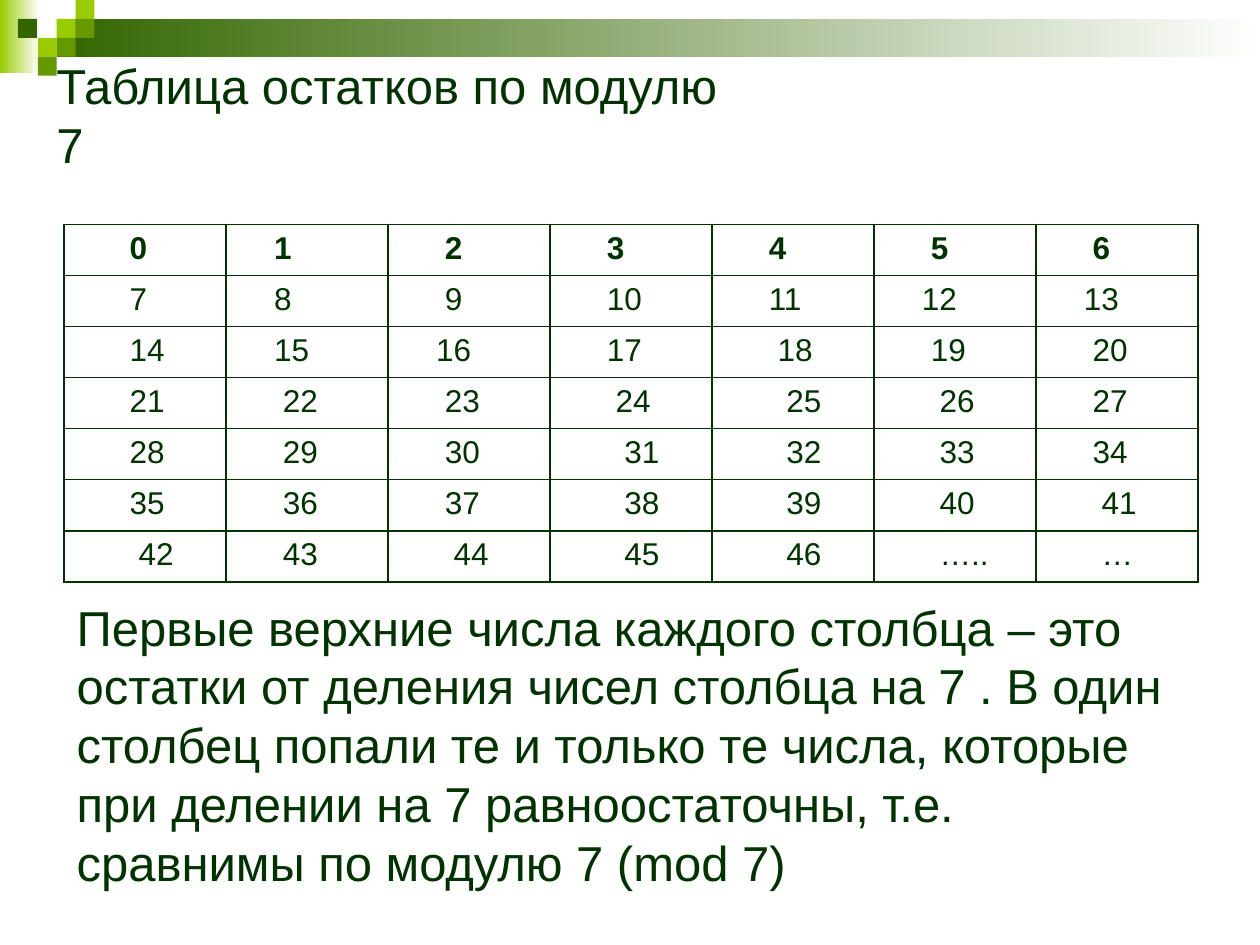
from dataclasses import dataclass

from lxml import etree
from pptx import Presentation
from pptx.dml.color import RGBColor
from pptx.enum.shapes import MSO_SHAPE
from pptx.enum.text import MSO_ANCHOR
from pptx.oxml.ns import qn
from pptx.util import Inches, Pt

RECTANGLE = MSO_SHAPE.RECTANGLE
MIDDLE, TOP = MSO_ANCHOR.MIDDLE, MSO_ANCHOR.TOP


@dataclass(frozen=True)
class Theme:
    font: str = "Arial"
    ink: str = "003300"
    white: str = "FFFFFF"
    lime: str = "99CC00"
    green: str = "669900"
    forest: str = "336600"
    text_size: int = 28
    table_size: int = 18
    border: int = 1


THEME = Theme()
MODULUS = 7
ROW_COUNT = 7
TITLE = ["Таблица остатков по модулю", "7"]
EXPLANATION = (
    "Первые верхние числа каждого столбца – это остатки от деления чисел "
    "столбца на 7 . В один столбец попали те и только те числа, которые "
    "при делении на 7 равноостаточны, т.е. сравнимы по модулю 7 (mod 7)"
)
# The sequence breaks off after 46
ENDINGS = {47: "…..", 48: "…"}
# Indent of each number, in steps of one space width
INDENT_STEP = 0.07
INDENTS = ["6455555", "6455544", "6445655", "6556765",
           "6557765", "6557766", "7567766"]


def style_font(font, size, bold=False):
    values = {"name": THEME.font, "size": Pt(size), "bold": bold}
    for name, value in values.items():
        setattr(font, name, value)
    font.color.rgb = RGBColor.from_string(THEME.ink)


def add_rectangle(slide, box, color, fade=False):
    shape = slide.shapes.add_shape(RECTANGLE, *map(Inches, box))
    shape.shadow.inherit = False
    shape.line.fill.background()
    if fade:
        shape.fill.gradient()
        shape.fill.gradient_angle = 0
        for stop, stop_color, position in zip(
                shape.fill.gradient_stops, (color, THEME.white), (0, 1)):
            stop.color.rgb = RGBColor.from_string(stop_color)
            stop.position = position
    else:
        shape.fill.solid()
        shape.fill.fore_color.rgb = RGBColor.from_string(color)


def add_header(slide, box):
    left, top, width, height = box
    # Fading corner and band
    add_rectangle(slide, (left, top, 0.31, height - 0.02), THEME.lime, True)
    add_rectangle(slide, (left + 0.45, top + 0.15, width - 0.45, 0.3),
                  THEME.forest, True)
    # Mosaic of small squares: column, row, colour
    side = 0.15
    squares = [(3, 1, THEME.lime), (4, 0, THEME.lime), (4, 1, THEME.green),
               (2, 2, THEME.lime), (0.95, 1, THEME.forest),
               (3, 2, THEME.green), (2, 3, THEME.green)]
    for column, row, color in squares:
        add_rectangle(slide, (left + column * side, top + row * side,
                              side, side), color)


def add_text(slide, box, lines, anchor):
    frame = slide.shapes.add_textbox(*map(Inches, box)).text_frame
    frame.word_wrap = True
    frame.vertical_anchor = anchor
    paragraph = frame.paragraphs[0]
    for index, line in enumerate(lines):
        if index:
            paragraph.add_line_break()
        run = paragraph.add_run()
        run.text = line
        style_font(run.font, THEME.text_size)


def add_borders(cell):
    properties = cell._tc.get_or_add_tcPr()
    for position, side in enumerate(("a:lnL", "a:lnR", "a:lnT", "a:lnB")):
        line = etree.Element(qn(side), w=str(Pt(THEME.border)))
        fill = etree.SubElement(line, qn("a:solidFill"))
        etree.SubElement(fill, qn("a:srgbClr"), val=THEME.ink)
        properties.insert(position, line)


def add_residue_table(slide, box):
    table = slide.shapes.add_table(ROW_COUNT, MODULUS,
                                   *map(Inches, box)).table
    for row in range(ROW_COUNT):
        for column in range(MODULUS):
            number = row * MODULUS + column
            cell = table.cell(row, column)
            cell.fill.background()
            cell.margin_left = Inches(
                0.1 + INDENT_STEP * int(INDENTS[row][column]))
            cell.text = ENDINGS.get(number, str(number))
            style_font(cell.text_frame.paragraphs[0].runs[0].font,
                       THEME.table_size, bold=row == 0)
            add_borders(cell)


def main():
    presentation = Presentation()
    presentation.slide_width = Inches(10)
    presentation.slide_height = Inches(7.5)
    slide = presentation.slides.add_slide(presentation.slide_layouts[6])
    add_header(slide, (0, 0, 10, 0.6))
    add_text(slide, (0.35, 0.44, 9, 0.94), TITLE, MIDDLE)
    add_residue_table(slide, (0.51, 1.78, 9, 2.84))
    add_text(slide, (0.51, 4.69, 8.98, 2.46), [EXPLANATION], TOP)
    presentation.save("out.pptx")


if __name__ == "__main__":
    main()
